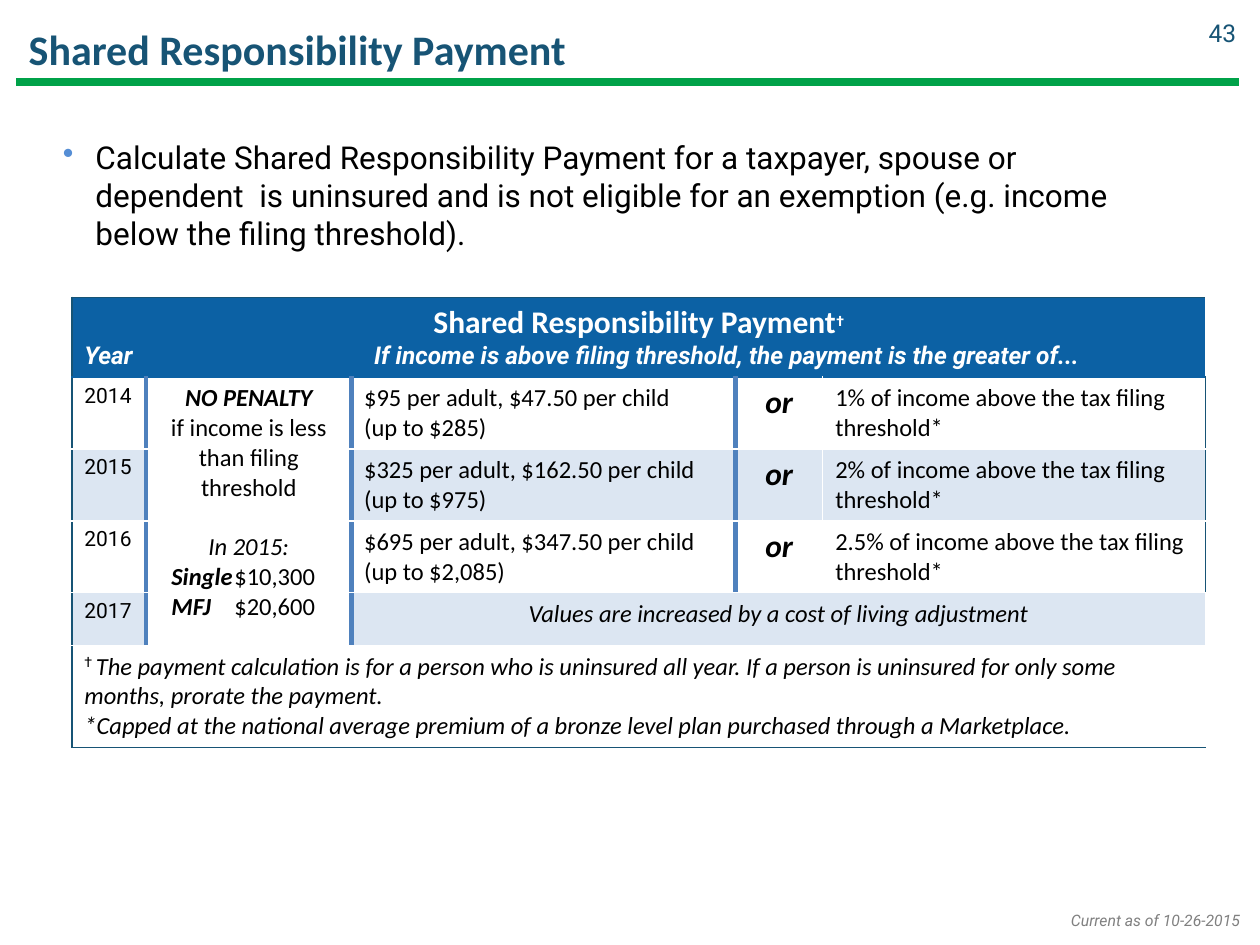
from lxml import etree
from pptx import Presentation
from pptx.dml.color import RGBColor
from pptx.enum.shapes import MSO_CONNECTOR
from pptx.enum.text import MSO_ANCHOR, PP_ALIGN
from pptx.oxml.ns import qn
from pptx.util import Inches, Pt

LEFT, MID, RIGHT = PP_ALIGN.LEFT, PP_ALIGN.CENTER, PP_ALIGN.RIGHT
TOP, HALF = MSO_ANCHOR.TOP, MSO_ANCHOR.MIDDLE
LINE = MSO_CONNECTOR.STRAIGHT
NAVY = RGBColor(0x17, 0x54, 0x75)
GREEN = RGBColor(0x00, 0xA2, 0x49)
BLUE = RGBColor(0x0C, 0x61, 0xA4)
EDGE = RGBColor(0x4F, 0x81, 0xBD)
PALE = RGBColor(0xDC, 0xE6, 0xF2)
DOT = RGBColor(0x55, 0x8E, 0xD5)
GRAY = RGBColor(0x80, 0x80, 0x80)
WHITE = RGBColor(0xFF, 0xFF, 0xFF)
BLACK = RGBColor(0, 0, 0)
SANS, BODY = "Calibri", "Roboto"

TITLE = "Shared Responsibility Payment"
POINT = ("Calculate Shared Responsibility Payment for a taxpayer, spouse or "
         "dependent  is uninsured and is not eligible for an exemption "
         "(e.g. income below the filing threshold).")
DATE = "Current as of 10-26-2015"
PAGE = "43"

HEAD = [
    (MID, [(TITLE, 18, SANS, "b"), ("†", 14, BODY, "b^")]),
    (LEFT, [("Year\tIf income is above filing threshold, "
             "the payment is the greater of...", 14, BODY, "bi")]),
]
FREE = [
    (MID, [("NO PENALTY", 14, SANS, "bi")]),
    (MID, [("if income is less than filing threshold", 14, SANS, "")]),
    (MID, [("In 2015:", 14, SANS, "i")]),
    (LEFT, [("Single", 14, SANS, "bi"), ("\t$10,300", 14, SANS, "")]),
    (LEFT, [("MFJ", 14, SANS, "bi"), ("\t$20,600", 14, SANS, "")]),
]
RATES = [
    ("2014", ["$95 per adult, $47.50 per child", "(up to $285)"], "1%"),
    ("2015", ["$325 per adult, $162.50 per child (up to $975)"], "2%"),
    ("2016", ["$695 per adult, $347.50 per child (up to $2,085)"], "2.5%"),
]
SHARE = " of income above the tax filing threshold*"
LAST = "2017"
RISE = "Values are increased by a cost of living adjustment"
NOTES = [
    (LEFT, [("† ", 14, BODY, "^"),
            ("The payment calculation is for a person who is uninsured all year. "
             "If a person is uninsured for only some months, prorate the payment.",
             14, SANS, "i")]),
    (LEFT, [("*Capped at the national average premium of a bronze level plan "
             "purchased through a Marketplace.", 14, SANS, "i")]),
]
COLS = [0.59, 1.63, 3.05, 0.69, 3.04]
ROWS = [0.63, 0.57, 0.57, 0.57, 0.42, 0.81]
SPANS = [(0, 0, 0, 4), (1, 1, 4, 1), (4, 2, 4, 4), (5, 0, 5, 4)]


def write(frame, paras, color):
    for i, (align, runs) in enumerate(paras):
        para = frame.paragraphs[0] if i == 0 else frame.add_paragraph()
        para.alignment = align
        for text, size, face, style in runs:
            run = para.add_run()
            run.text = text
            font = run.font
            font.size, font.name = Pt(size), face
            font.color.rgb = color
            font.bold, font.italic = "b" in style, "i" in style
            if "^" in style:
                run._r.get_or_add_rPr().set("baseline", "30000")


def label(slide, box, para, color, anchor=TOP):
    frame = slide.shapes.add_textbox(*map(Inches, box)).text_frame
    frame.word_wrap = True
    frame.vertical_anchor = anchor
    write(frame, [para], color)
    return frame


def indent(para, left, first=0):
    props = para._p.get_or_add_pPr()
    props.set("marL", str(Inches(left)))
    props.set("indent", str(Inches(first)))
    return props


def add_tab(para, pos):
    tabs = etree.SubElement(para._p.get_or_add_pPr(), qn("a:tabLst"))
    etree.SubElement(tabs, qn("a:tab"), pos=str(Inches(pos)), algn="l")


def add_dot(para):
    props = indent(para, 0.26, -0.26)
    tint = etree.SubElement(props, qn("a:buClr"))
    etree.SubElement(tint, qn("a:srgbClr"), val=str(DOT))
    etree.SubElement(props, qn("a:buChar"), char="•")


def side(row, x):
    if x in (0, 5):
        return NAVY, 1
    if x < 3 or row < 4:
        return (EDGE, 3) if x < 4 else (WHITE, 1)
    return WHITE, 1


def level(col, y):
    if y in (0, 6):
        return NAVY, 1
    if y == 1:
        return BLUE, 1
    return (EDGE, 3) if (col, y) == (1, 5) else (WHITE, 1)


def border(cell, row, col):
    lines = [("L", side(row, col)), ("R", side(row, col + 1)),
             ("T", level(col, row)), ("B", level(col, row + 1))]
    if row in (0, 5):
        lines = [(tag, line) for tag, line in lines
                 if not (tag == "L" and col) and not (tag == "R" and col < 4)]
    props = cell._tc.get_or_add_tcPr()
    for i, (tag, (color, width)) in enumerate(lines):
        line = etree.Element(qn("a:ln" + tag), w=str(Pt(width)))
        fill = etree.SubElement(line, qn("a:solidFill"))
        etree.SubElement(fill, qn("a:srgbClr"), val=str(color))
        props.insert(i, line)


def grid(slide):
    box = map(Inches, (0.57, 2.36, sum(COLS), sum(ROWS)))
    table = slide.shapes.add_table(len(ROWS), len(COLS), *box).table
    for part, width in zip(table.columns, COLS):
        part.width = Inches(width)
    for part, height in zip(table.rows, ROWS):
        part.height = Inches(height)
    for row in range(len(ROWS)):
        for col in range(len(COLS)):
            cell = table.cell(row, col)
            shade = PALE if row in (2, 4) and col != 1 else WHITE
            cell.fill.solid()
            cell.fill.fore_color.rgb = BLUE if row == 0 else shade
            border(cell, row, col)
    for top, left, low, far in SPANS:
        table.cell(top, left).merge(table.cell(low, far))

    cells = {(0, 0): HEAD, (1, 1): FREE, (5, 0): NOTES,
             (4, 0): [(LEFT, [(LAST, 12, BODY, "")])],
             (4, 2): [(MID, [(RISE, 14, SANS, "i")])]}
    for row, (year, fee, rate) in enumerate(RATES, 1):
        cells[row, 0] = [(LEFT, [(year, 12, BODY, "")])]
        cells[row, 2] = [(LEFT, [(text, 14, SANS, "")]) for text in fee]
        cells[row, 3] = [(MID, [("or", 18, SANS, "bi")])]
        cells[row, 4] = [(LEFT, [(rate + SHARE, 14, SANS, "")])]
    for (row, col), paras in cells.items():
        write(table.cell(row, col).text_frame, paras, BLACK if row else WHITE)

    add_tab(table.cell(0, 0).text_frame.paragraphs[1], 2.3)
    free = table.cell(1, 1).text_frame.paragraphs
    free[2].space_before = Pt(17)
    for para in free[3:]:
        indent(para, 0.1)
        add_tab(para, 0.68)


def main():
    deck = Presentation()
    deck.slide_width, deck.slide_height = Inches(10), Inches(7.5)
    slide = deck.slides.add_slide(deck.slide_layouts[6])
    label(slide, (8.31, 7.18, 1.63, 0.25),
          (RIGHT, [(DATE, 9, BODY, "i")]), GRAY).word_wrap = False
    ends = map(Inches, (0.13, 0.65, 9.83, 0.65))
    rule = slide.shapes.add_connector(LINE, *ends)
    rule.line.color.rgb = GREEN
    rule.line.width = Pt(4.75)
    etree.SubElement(rule._element.spPr, qn("a:effectLst"))
    label(slide, (0.13, 0.1, 9, 0.57),
          (LEFT, [(TITLE, 24, SANS, "b")]), NAVY, HALF)
    point = label(slide, (0.4, 1.05, 9, 1.1),
                  (LEFT, [(POINT, 18, BODY, "")]), BLACK)
    add_dot(point.paragraphs[0])
    grid(slide)
    label(slide, (9.4, 0.06, 0.51, 0.4),
          (RIGHT, [(PAGE, 14, BODY, "")]), NAVY, HALF)
    deck.save("out.pptx")


if __name__ == "__main__":
    main()
